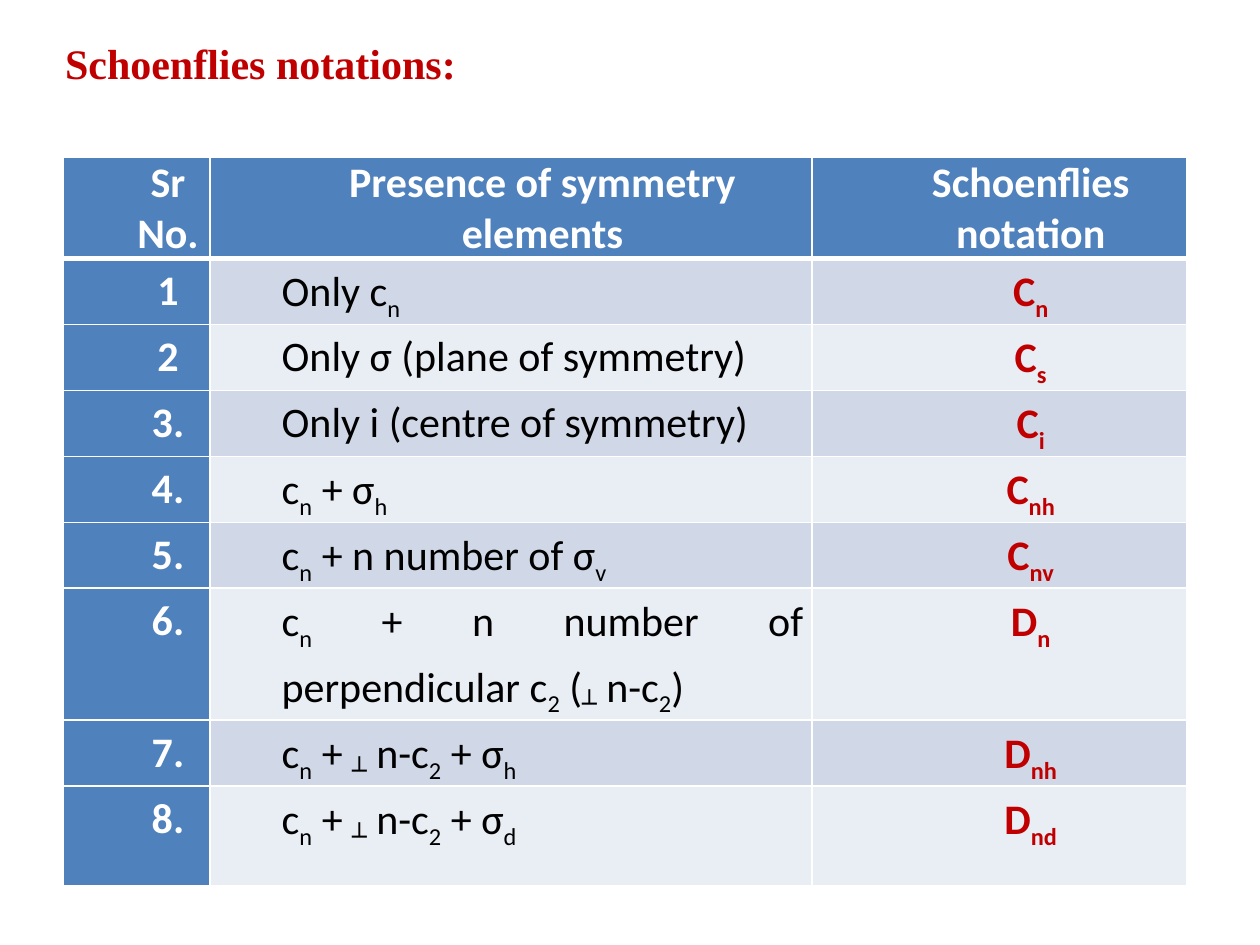
from lxml.etree import SubElement
from pptx import Presentation
from pptx.dml.color import RGBColor
from pptx.enum.text import MSO_ANCHOR, MSO_AUTO_SIZE, PP_ALIGN
from pptx.oxml.ns import qn
from pptx.util import Pt

WHITE, BLACK, RED, BLUE = "FFFFFF", "000000", "C00000", "4F81BD"
BANDS = ("D0D8E8", "E9EDF4")
HEADINGS = ("Sr No.", "Presence of symmetry elements", "Schoenflies notation")
NOTATIONS = (
    ("1", "Only c_n", "C_n"),
    ("2", "Only σ (plane of symmetry)", "C_s"),
    ("3.", "Only i (centre of symmetry)", "C_i"),
    ("4.", "c_n_ + σ_h", "C_nh"),
    ("5.", "c_n_ + n number of σ_v", "C_nv"),
    ("6.", "c_n_ + n number of perpendicular c_2_ (_┴_ n-c_2_)", "D_n"),
    ("7.", "c_n_ + _┴_ n-c_2_ + σ_h", "D_nh"),
    ("8.", "c_n_ + _┴_ n-c_2_ + σ_d", "D_nd"),
)
COLUMN_WIDTHS = (84, 344, 214)
ROW_HEIGHTS = (31,) * 6 + (64, 31, 57)


def color(hex_string):
    """Turn a hex string into a colour."""
    return RGBColor.from_string(hex_string)


def style_font(font, name, hex_string, bold):
    """Give a font the slide's text size and the stated look."""
    font.name, font.size, font.bold = name, Pt(24), bold
    font.color.rgb = color(hex_string)


def add_title(slide, left, top, width, height):
    """Place the slide title."""
    title = slide.shapes.title
    title.left, title.top, title.width, title.height = map(Pt, (left, top, width, height))
    frame = title.text_frame
    frame.text = "Schoenflies notations:"
    frame.word_wrap = True
    frame.auto_size = MSO_AUTO_SIZE.SHAPE_TO_FIT_TEXT
    frame.vertical_anchor = MSO_ANCHOR.MIDDLE
    heading = frame.paragraphs[0]
    heading.alignment = PP_ALIGN.JUSTIFY
    style_font(heading.runs[0].font, "Times New Roman", RED, True)


def set_borders(cell, top, bottom):
    """Draw white borders round a cell, with its top and bottom widths."""
    properties = cell._tc.get_or_add_tcPr()
    for side, width in (("L", 1), ("R", 1), ("T", top), ("B", bottom)):
        line = SubElement(properties, qn(f"a:ln{side}"), w=str(Pt(width)))
        fill = SubElement(line, qn("a:solidFill"))
        SubElement(fill, qn("a:srgbClr"), val=WHITE)


def fill_cell(cell, marked_text, row, column):
    """Write a cell, lowering every second part between underscores."""
    set_borders(cell, 3 if row == 1 else 1, 3 if row == 0 else 1)
    cell.margin_left = cell.margin_right = Pt(5)
    cell.margin_top = cell.margin_bottom = Pt(0)
    is_heading = row == 0 or column == 0
    cell.fill.solid()
    cell.fill.fore_color.rgb = color(BLUE if is_heading else BANDS[(row - 1) % 2])
    ink = WHITE if is_heading else (BLACK, RED)[column - 1]
    is_element = row > 0 and column == 1

    paragraph = cell.text_frame.paragraphs[0]
    paragraph.alignment = PP_ALIGN.JUSTIFY if is_element else PP_ALIGN.CENTER
    if row:
        paragraph.line_spacing = 1.15
    indents = paragraph._p.get_or_add_pPr()
    indents.set("marL", str(Pt(36)))
    indents.set("indent", "0")
    for index, part in enumerate(marked_text.split("_")):
        run = paragraph.add_run()
        run.text = part
        style_font(run.font, "Calibri", ink, not is_element)
        if index % 2:
            run.font._element.set("baseline", "-25000")


def add_notation_table(slide, left, top):
    """Place the table of symmetry elements and their notations."""
    rows = (HEADINGS, *NOTATIONS)
    table = slide.shapes.add_table(
        len(rows), len(HEADINGS), Pt(left), Pt(top),
        Pt(sum(COLUMN_WIDTHS)), Pt(sum(ROW_HEIGHTS))).table
    for column, width in zip(table.columns, COLUMN_WIDTHS):
        column.width = Pt(width)
    for row, height in zip(table.rows, ROW_HEIGHTS):
        row.height = Pt(height)
    for row, texts in enumerate(rows):
        for column, text in enumerate(texts):
            fill_cell(table.cell(row, column), text, row, column)


def main():
    """Build and save the slide."""
    presentation = Presentation()
    presentation.slide_width, presentation.slide_height = Pt(720), Pt(540)
    slide = presentation.slides.add_slide(presentation.slide_layouts[5])
    add_title(slide, 30, 18, 246, 36)
    add_notation_table(slide, 36, 90)
    presentation.save("out.pptx")


if __name__ == "__main__":
    main()
